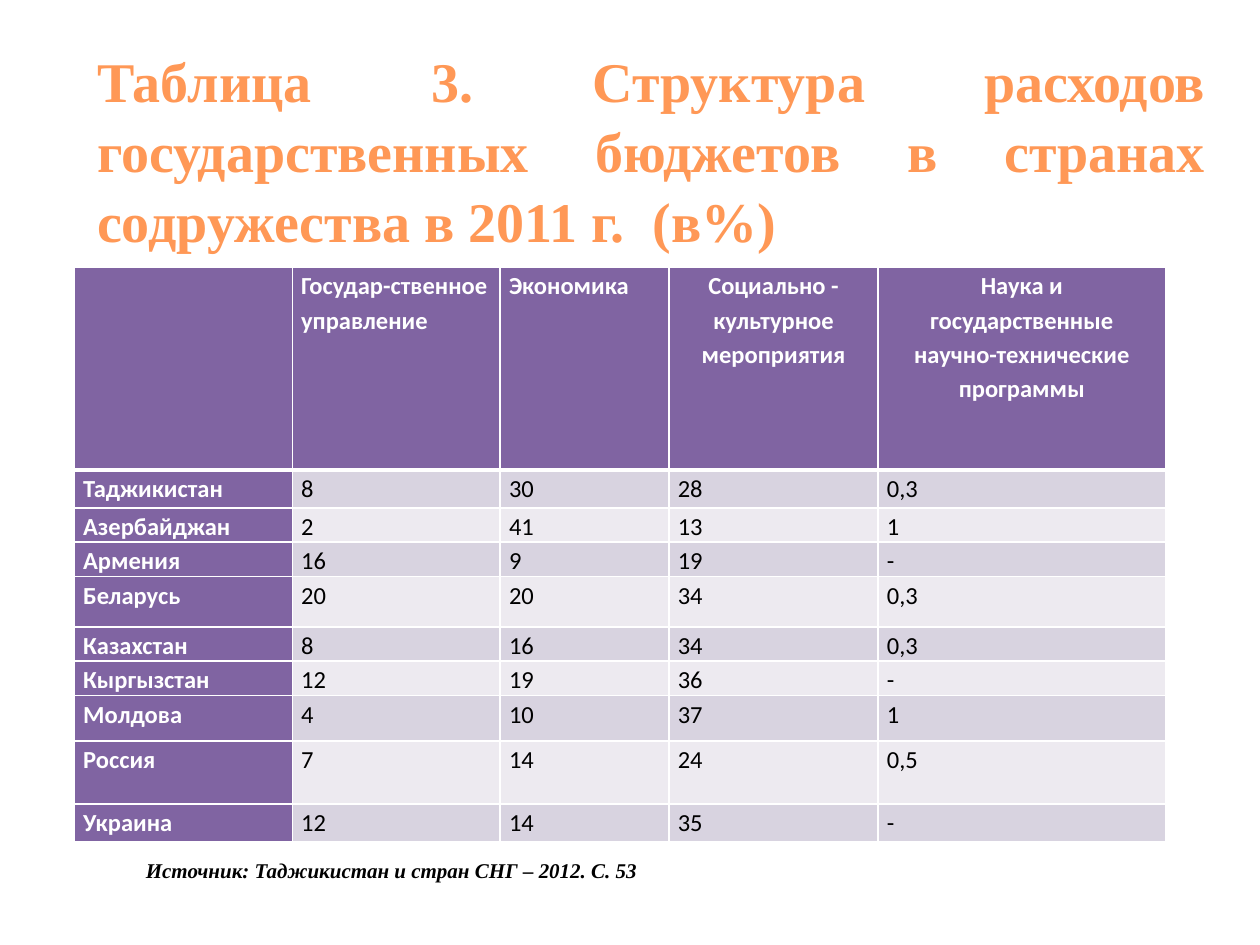
import pptx
import pptx.util
import pptx.dml.color
import pptx.enum.text
import pptx.oxml
import pptx.oxml.ns

Inches = pptx.util.Inches
Pt = pptx.util.Pt
ALIGN = pptx.enum.text.PP_ALIGN
MIDDLE = pptx.enum.text.MSO_ANCHOR.MIDDLE

theme = {
    "title": "FF9856", "head": "8064A2", "odd": "D8D3E0", "even": "EDEAF0",
    "light": "FFFFFF", "dark": "000000",
    "serif": "Times New Roman", "sans": "Calibri",
    "title_pt": 32, "cell_pt": 14, "note_pt": 12,
}


def style(par, face, size, color, bold=True, italic=False):
    for run in par.runs:
        font = run.font
        font.name = theme[face]
        font.size = Pt(theme[size])
        font.color.rgb = pptx.dml.color.RGBColor.from_string(theme[color])
        font.bold = bold
        font.italic = italic


def border(cell, side, width):
    line = pptx.oxml.parse_xml(
        f'<a:{side} {pptx.oxml.ns.nsdecls("a")} w="{Pt(width)}"><a:solidFill>'
        f'<a:srgbClr val="{theme["light"]}"/></a:solidFill></a:{side}>')
    cell._tc.get_or_add_tcPr().append(line)


deck = pptx.Presentation()
deck.slide_width = Inches(10)
deck.slide_height = Inches(7.5)
slide = deck.slides.add_slide(deck.slide_layouts[5])

# Title
title = slide.shapes.title
title.left, title.top = Inches(0.67), Inches(0.38)
title.width, title.height = Inches(9), Inches(1.6)
frame = title.text_frame
frame.text = ("Таблица 3. Структура расходов государственных бюджетов "
              "в странах содружества в 2011 г.  (в%)")
frame.vertical_anchor = MIDDLE
par = frame.paragraphs[0]
par.alignment = ALIGN.JUSTIFY
par.line_spacing = 1.04
style(par, "serif", "title_pt", "title")

# Table of budget shares
data = [
    ["", "Государ-ственное управление", "Экономика",
     "Социально - культурное мероприятия",
     "Наука и государственные научно-технические программы"],
    ["Таджикистан", "8", "30", "28", "0,3"],
    ["Азербайджан", "2", "41", "13", "1"],
    ["Армения", "16", "9", "19", "-"],
    ["Беларусь", "20", "20", "34", "0,3"],
    ["Казахстан", "8", "16", "34", "0,3"],
    ["Кыргызстан", "12", "19", "36", "-"],
    ["Молдова", "4", "10", "37", "1"],
    ["Россия", "7", "14", "24", "0,5"],
    ["Украина", "12", "14", "35", "-"],
]
widths = [1.73, 1.65, 1.34, 1.66, 2.28]
heights = [1.61, 0.3, 0.27, 0.27, 0.4, 0.27, 0.27, 0.36, 0.5, 0.3]
table = slide.shapes.add_table(
    len(data), len(widths), Inches(0.59), Inches(2.12),
    Inches(sum(widths)), Inches(sum(heights))).table
table.first_col = True
for col, width in zip(table.columns, widths):
    col.width = Inches(width)
for row, height in zip(table.rows, heights):
    row.height = Inches(height)

for r, values in enumerate(data):
    for c, value in enumerate(values):
        cell = table.cell(r, c)
        label = r == 0 or c == 0
        cell.margin_left = cell.margin_right = Inches(0.07)
        cell.margin_top = cell.margin_bottom = 0
        cell.text_frame.text = value
        par = cell.text_frame.paragraphs[0]
        par.alignment = ALIGN.CENTER if r == 0 and c > 2 else ALIGN.JUSTIFY
        par.line_spacing = 1.15
        par.space_after = Pt(10)
        par.font.size = Pt(theme["cell_pt"])
        style(par, "sans", "cell_pt", "light" if label else "dark", label)
        # The rule under the header is thicker than the others
        for side, width in (("lnL", 1), ("lnR", 1), ("lnT", 3 if r == 1 else 1),
                            ("lnB", 3 if r == 0 else 1)):
            border(cell, side, width)
        fill = "head" if label else "odd" if r % 2 else "even"
        cell.fill.solid()
        cell.fill.fore_color.rgb = pptx.dml.color.RGBColor.from_string(theme[fill])

# Source note
note = slide.shapes.add_textbox(Inches(1.06), Inches(6.66), Inches(8), Inches(0.5))
frame = note.text_frame
frame.word_wrap = True
frame.vertical_anchor = MIDDLE
frame.text = "Источник: Таджикистан и стран СНГ – 2012. С. 53"
par = frame.paragraphs[0]
par.alignment = ALIGN.JUSTIFY
style(par, "serif", "note_pt", "dark", italic=True)

deck.save("out.pptx")
